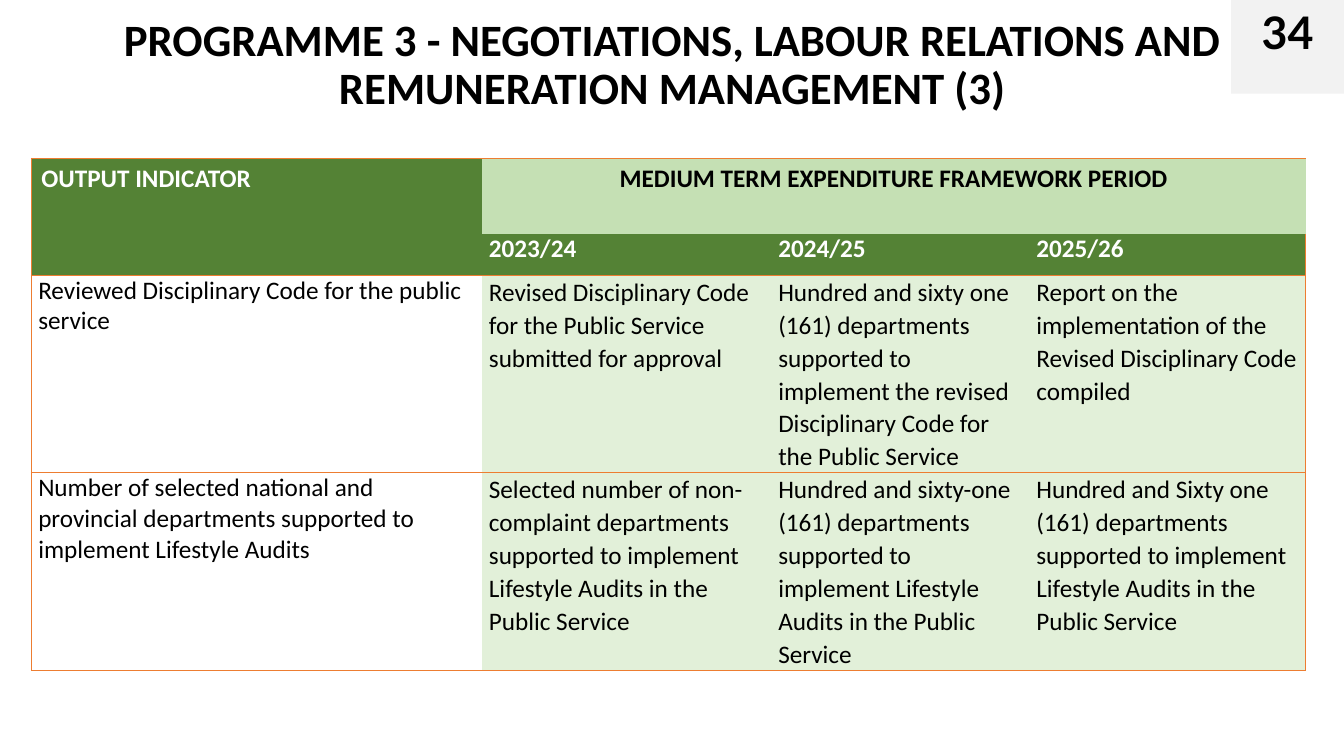
from dataclasses import dataclass

from lxml import etree
from pptx import Presentation
from pptx.dml.color import RGBColor
from pptx.enum.shapes import MSO_SHAPE
from pptx.enum.text import MSO_ANCHOR, MSO_AUTO_SIZE, PP_ALIGN
from pptx.oxml.ns import qn
from pptx.util import Inches, Pt

RECTANGLE = MSO_SHAPE.RECTANGLE
TOP, MIDDLE = MSO_ANCHOR.TOP, MSO_ANCHOR.MIDDLE
LEFT, CENTER = PP_ALIGN.LEFT, PP_ALIGN.CENTER
NO_AUTOFIT = MSO_AUTO_SIZE.NONE

TITLE = "PROGRAMME 3 - NEGOTIATIONS, LABOUR RELATIONS AND REMUNERATION MANAGEMENT (3)"
PAGE_NUMBER = "34"
INDICATOR_HEADING = "OUTPUT INDICATOR"
PERIOD_HEADING = "MEDIUM TERM EXPENDITURE FRAMEWORK PERIOD"
YEARS = ["2023/24", "2024/25", "2025/26"]
INDICATORS = [
    (
        "Reviewed Disciplinary Code for the public service",
        "Revised Disciplinary Code for the Public Service submitted for approval",
        "Hundred and sixty one (161) departments supported to implement the revised "
        "Disciplinary Code for the Public Service",
        "Report on the implementation of the Revised Disciplinary Code compiled",
    ),
    (
        "Number of selected national and provincial departments supported to "
        "implement Lifestyle Audits",
        "Selected number of non-complaint departments supported to implement "
        "Lifestyle Audits in the Public Service",
        "Hundred and sixty-one (161) departments supported to implement "
        "Lifestyle Audits in the Public Service",
        "Hundred and Sixty one (161) departments supported to implement "
        "Lifestyle Audits in the Public Service",
    ),
]
COLUMN_WIDTHS = [4.47, 2.87, 2.56, 2.74]
ROW_HEIGHTS = [0.75, 0.41, 1.96, 1.96]


@dataclass(frozen=True)
class Theme:
    black: str = "000000"
    white: str = "FFFFFF"
    dark_green: str = "548235"
    mid_green: str = "C5E0B4"
    pale_green: str = "E2F0D9"
    rule: str = "ED7D31"
    badge: str = "F2F2F2"
    font: str = "Calibri"
    badge_font: str = "Lato"
    title_size: int = 32
    table_size: int = 18
    rule_width: float = 0.5


THEME = Theme()


def write(frame, words, size, color, bold=True, font=THEME.font, align=LEFT, spacing=1.0):
    paragraph = frame.paragraphs[0]
    paragraph.alignment = align
    paragraph.line_spacing = spacing
    run = paragraph.add_run()
    run.text = words
    for name, value in {"name": font, "size": Pt(size), "bold": bold}.items():
        setattr(run.font, name, value)
    run.font.color.rgb = RGBColor.from_string(color)


def paint(fill, color):
    if color is None:
        fill.background()
    else:
        fill.solid()
        fill.fore_color.rgb = RGBColor.from_string(color)


def rule_cell(cell, visible):
    properties = cell._tc.get_or_add_tcPr()
    for position, side in enumerate("LRTB"):
        line = etree.Element(qn(f"a:ln{side}"), w=str(Pt(THEME.rule_width)))
        if side in visible:
            fill = etree.SubElement(line, qn("a:solidFill"))
            etree.SubElement(fill, qn("a:srgbClr"), val=THEME.rule)
        else:
            etree.SubElement(line, qn("a:noFill"))
        properties.insert(position, line)


def fill_cell(cell, words, color, background, inset=True, **text_format):
    if inset:
        margins = {"margin_left": 0.07, "margin_top": 0, "margin_right": 0.07, "margin_bottom": 0}
        for name, value in margins.items():
            setattr(cell, name, Inches(value))
    paint(cell.fill, background)
    write(cell.text_frame, words, THEME.table_size, color, **text_format)


def add_title(slide):
    title = slide.shapes.title
    place = {"left": 0.92, "top": 0.17, "width": 11.5, "height": 0.97}
    for name, value in place.items():
        setattr(title, name, Inches(value))
    frame_format = {"word_wrap": True, "auto_size": NO_AUTOFIT, "vertical_anchor": MIDDLE}
    for name, value in frame_format.items():
        setattr(title.text_frame, name, value)
    write(title.text_frame, TITLE, THEME.title_size, THEME.black, align=CENTER, spacing=0.9)


def add_indicator_table(slide):
    row_count, column_count = len(ROW_HEIGHTS), len(COLUMN_WIDTHS)
    table = slide.shapes.add_table(
        row_count, column_count, Inches(0.31), Inches(1.57),
        Inches(sum(COLUMN_WIDTHS)), Inches(sum(ROW_HEIGHTS)),
    ).table
    table.first_row = table.horz_banding = False
    for column, width in zip(table.columns, COLUMN_WIDTHS):
        column.width = Inches(width)
    for row, height in zip(table.rows, ROW_HEIGHTS):
        row.height = Inches(height)

    table.cell(0, 0).merge(table.cell(1, 0))
    table.cell(0, 1).merge(table.cell(0, column_count - 1))
    fill_cell(table.cell(0, 0), INDICATOR_HEADING, THEME.white, THEME.dark_green, inset=False)
    fill_cell(table.cell(0, 1), PERIOD_HEADING, THEME.black, THEME.mid_green,
              inset=False, align=CENTER)
    for column, year in enumerate(YEARS, 1):
        fill_cell(table.cell(1, column), year, THEME.white, THEME.dark_green)
    for row, (indicator, *targets) in enumerate(INDICATORS, 2):
        fill_cell(table.cell(row, 0), indicator, THEME.black, None, bold=False)
        for column, target in enumerate(targets, 1):
            fill_cell(table.cell(row, column), target, THEME.black, THEME.pale_green,
                      bold=False, spacing=1.07)

    for row in range(row_count):
        for column in range(column_count):
            edges = {
                "L": column == 0,
                "R": column == column_count - 1,
                "T": row != 1,
                "B": row != 0,
            }
            rule_cell(table.cell(row, column), [side for side, shown in edges.items() if shown])


def add_page_badge(slide):
    badge = slide.shapes.add_shape(RECTANGLE, Inches(12.21), 0, Inches(1.12), Inches(0.93))
    badge.shadow.inherit = False
    paint(badge.fill, THEME.badge)
    badge.line.fill.background()
    badge.text_frame.vertical_anchor = TOP
    write(badge.text_frame, PAGE_NUMBER, THEME.title_size, THEME.black,
          font=THEME.badge_font, align=CENTER)


def main():
    deck = Presentation()
    deck.slide_width, deck.slide_height = Inches(13.33), Inches(7.5)
    slide = deck.slides.add_slide(deck.slide_layouts[5])
    add_title(slide)
    add_indicator_table(slide)
    add_page_badge(slide)
    deck.save("out.pptx")


if __name__ == "__main__":
    main()
